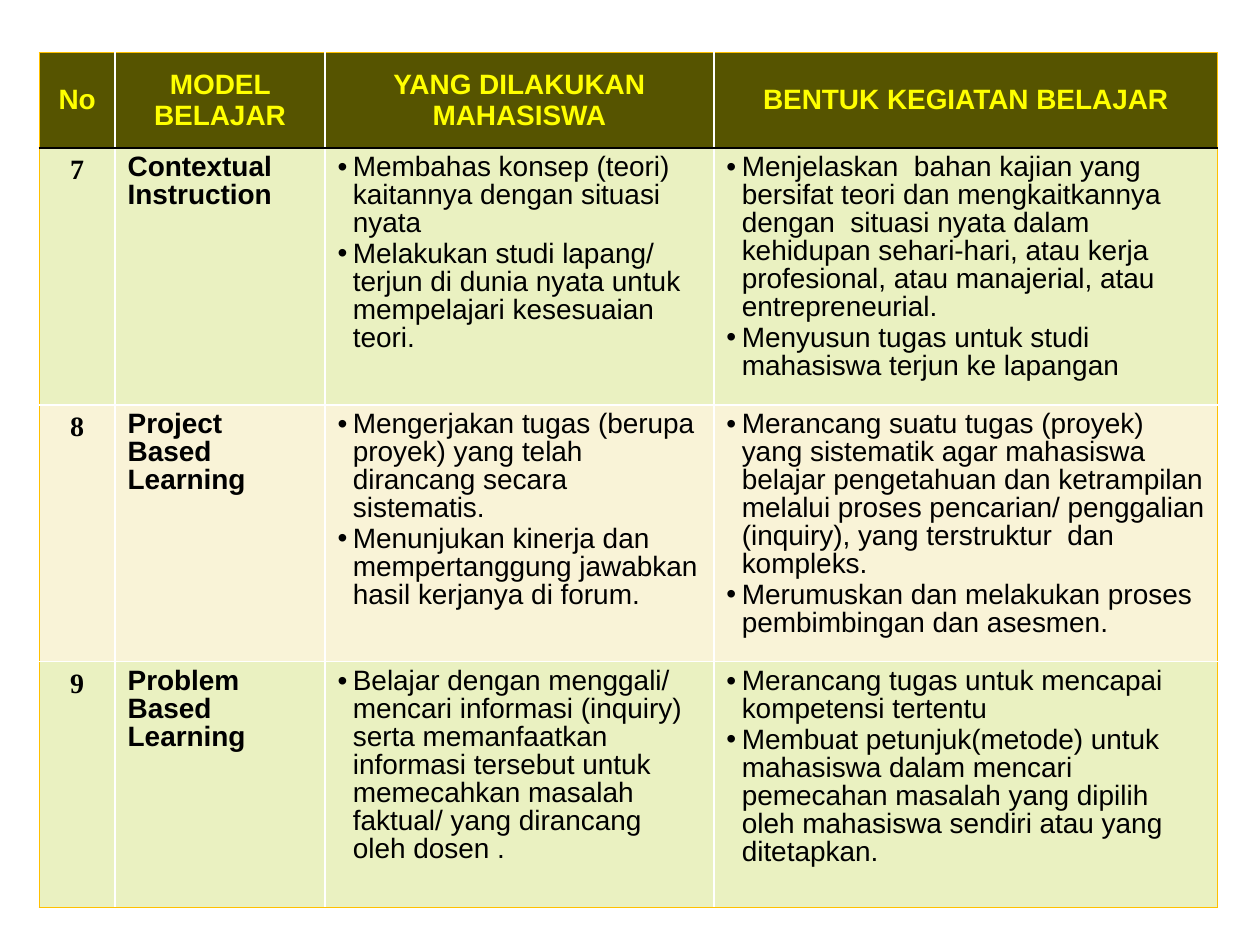
"""Build a slide with a table of learning models and their activities."""
from dataclasses import dataclass

from lxml.etree import SubElement
from pptx import Presentation
from pptx.dml.color import RGBColor
from pptx.enum.text import MSO_ANCHOR, PP_ALIGN
from pptx.oxml import parse_xml
from pptx.oxml.ns import nsdecls, qn
from pptx.util import Cm, Pt


@dataclass(frozen=True)
class Theme:
    header_fill: str = "565400"
    header_text: str = "FFFF00"
    body_fills: tuple = ("EAF1C1", "F9F3D7")
    body_text: str = "000000"
    grid: tuple = ("FFFFFF", 1)
    outline: tuple = ("FFC000", 0.75)
    header_rule: tuple = ("000000", 1)
    font: str = "Arial"
    number_font: str = "Times New Roman"
    size: float = 16
    bullet_gap: float = 1.6


HEADERS = ["No", "MODEL BELAJAR", "YANG DILAKUKAN MAHASISWA", "BENTUK KEGIATAN BELAJAR"]
MODELS = [
    ("7", "Contextual Instruction",
     ["Membahas konsep (teori) kaitannya dengan situasi nyata",
      "Melakukan studi lapang/ terjun di dunia nyata untuk mempelajari kesesuaian teori."],
     ["Menjelaskan  bahan kajian yang bersifat teori dan mengkaitkannya dengan  situasi nyata "
      "dalam kehidupan sehari-hari, atau kerja profesional, atau manajerial, atau entrepreneurial.",
      "Menyusun tugas untuk studi mahasiswa terjun ke lapangan"]),
    ("8", "Project Based Learning",
     ["Mengerjakan tugas (berupa proyek) yang telah dirancang secara sistematis.",
      "Menunjukan kinerja dan mempertanggung jawabkan hasil kerjanya di forum."],
     ["Merancang suatu tugas (proyek) yang sistematik agar mahasiswa belajar pengetahuan dan "
      "ketrampilan melalui proses pencarian/ penggalian (inquiry), yang terstruktur  dan kompleks.",
      "Merumuskan dan melakukan proses pembimbingan dan asesmen."]),
    ("9", "Problem Based Learning",
     ["Belajar dengan menggali/ mencari informasi (inquiry) serta memanfaatkan informasi "
      "tersebut untuk memecahkan masalah faktual/ yang dirancang oleh dosen ."],
     ["Merancang tugas untuk mencapai kompetensi tertentu",
      "Membuat petunjuk(metode) untuk mahasiswa dalam mencari pemecahan masalah yang dipilih "
      "oleh mahasiswa sendiri atau yang ditetapkan."]),
]
COL_WIDTHS = [1.53, 4.23, 7.84, 10.16]
ROW_HEIGHTS = [1.92, 5.18, 5.18, 4.95]


class SlideBuilder:
    """Hold the theme and the current slide."""

    def __init__(self, s, theme):
        self.s = s
        self.theme = theme

    def table(self, left, top, widths, heights):
        """Add an unstyled table with the given column widths and row heights."""
        frame = self.s.shapes.add_table(len(heights), len(widths), Cm(left), Cm(top),
                                        Cm(sum(widths)), Cm(sum(heights)))
        table = frame.table
        table.first_row = table.horz_banding = False
        for column, width in zip(table.columns, widths):
            column.width = Cm(width)
        for row, height in zip(table.rows, heights):
            row.height = Cm(height)
        return table

    def borders(self, cell, sides):
        """Draw the cell borders from a mapping of side to colour and width."""
        tc_pr = cell._tc.get_or_add_tcPr()
        for i, side in enumerate("LRTB"):
            color, width = sides[side]
            tc_pr.insert(i, parse_xml(
                f'<a:ln{side} {nsdecls("a")} w="{Pt(width)}"><a:solidFill>'
                f'<a:srgbClr val="{color}"/></a:solidFill></a:ln{side}>'))

    def bullet(self, p):
        """Give the paragraph a round bullet with a hanging indent."""
        p_pr = p._p.get_or_add_pPr()
        p_pr.set("marL", str(Cm(0.31)))
        p_pr.set("indent", str(-Cm(0.31)))
        SubElement(p_pr, qn("a:buFont")).set("typeface", self.theme.font)
        SubElement(p_pr, qn("a:buChar")).set("char", "•")

    def cell(self, cell, lines, fill, color, font=None, bold=True, centered=False,
             bullets=False, spacing=None):
        """Fill a cell with formatted paragraphs."""
        cell.fill.solid()
        cell.fill.fore_color.rgb = RGBColor.from_string(fill)
        tf = cell.text_frame
        tf.text = "\n".join(lines)
        for i, p in enumerate(tf.paragraphs):
            if bullets:
                self.bullet(p)
            p.alignment = PP_ALIGN.CENTER if centered else PP_ALIGN.LEFT
            if spacing:
                p.line_spacing = spacing
            if i:
                p.space_before = Pt(self.theme.bullet_gap)
            for r in p.runs:
                r.font.name = font or self.theme.font
                r.font.size = Pt(self.theme.size)
                r.font.bold = bold
                r.font.color.rgb = RGBColor.from_string(color)

    def model_table(self, headers, models):
        """Add the table of learning models."""
        th = self.theme
        table = self.table(0.79, 1.06, COL_WIDTHS, ROW_HEIGHTS)
        for c, header in enumerate(headers):
            cell = table.cell(0, c)
            self.cell(cell, [header], th.header_fill, th.header_text, centered=True)
            cell.vertical_anchor = MSO_ANCHOR.MIDDLE
        for row, (number, name, *activities) in enumerate(models, 1):
            fill = th.body_fills[(row - 1) % 2]
            self.cell(table.cell(row, 0), [number], fill, th.body_text,
                      font=th.number_font, centered=True)
            self.cell(table.cell(row, 1), [name], fill, th.body_text, spacing=0.9)
            for c, lines in enumerate(activities, 2):
                self.cell(table.cell(row, c), lines, fill, th.body_text,
                          bold=False, bullets=True, spacing=0.9)
        last_row, last_col = len(models), len(headers) - 1
        top_rules = {0: th.outline, 1: th.header_rule}
        bottom_rules = {0: th.header_rule, last_row: th.outline}
        for row in range(last_row + 1):
            for c in range(last_col + 1):
                self.borders(table.cell(row, c), {
                    "L": th.grid if c else th.outline,
                    "R": th.outline if c == last_col else th.grid,
                    "T": top_rules.get(row, th.grid),
                    "B": bottom_rules.get(row, th.grid)})


def main():
    prs = Presentation()
    prs.slide_width, prs.slide_height = Cm(25.4), Cm(19.05)
    s = prs.slides.add_slide(prs.slide_layouts[6])
    SlideBuilder(s, Theme()).model_table(HEADERS, MODELS)
    prs.save("out.pptx")


if __name__ == "__main__":
    main()
